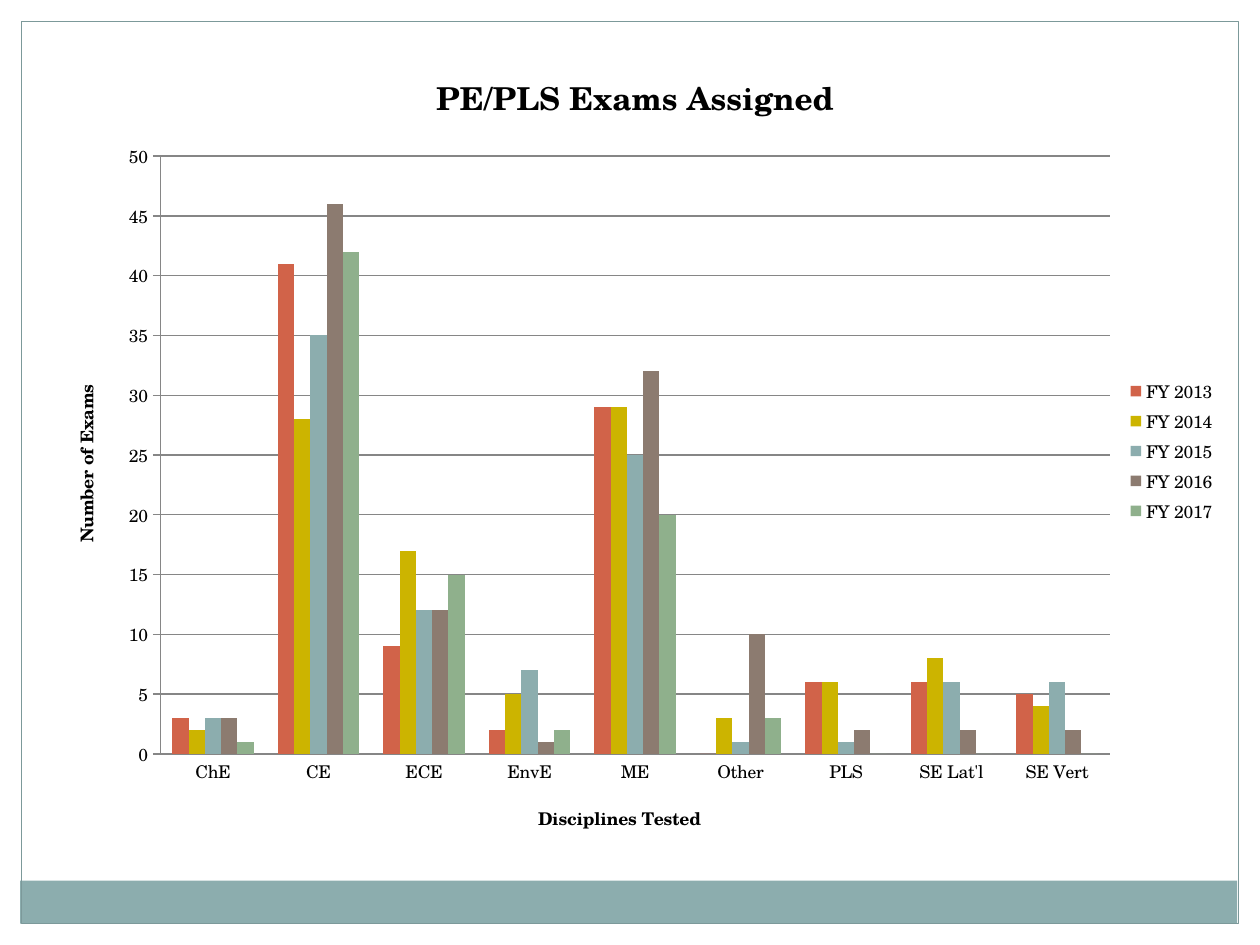
"""Build the slide with a clustered column chart of PE/PLS exams assigned per discipline."""
from lxml import etree
from pptx import Presentation
from pptx import util as u
from pptx.chart.data import CategoryChartData
from pptx.dml.color import RGBColor
from pptx.enum import chart as kinds, shapes
from pptx.oxml.ns import qn

FONT = "TeX Gyre Schola"


def color(value):
    return RGBColor.from_string(value)


def add_title(owner, words, size):
    owner.has_title = True
    frame = owner.chart_title.text_frame if hasattr(owner, "chart_title") else owner.axis_title.text_frame
    frame.text = words
    font = frame.paragraphs[0].font
    font.name, font.size, font.bold = FONT, u.Pt(size), True
    font.color.rgb = color("000000")


deck = Presentation()
deck.slide_width, deck.slide_height = u.Inches(10), u.Inches(7.5)
page = deck.slides.add_slide(deck.slide_layouts[6])

panels = [
    (0, 0, 10, 0.17, "FFFFFF", None),
    (9.83, 0, 0.17, 7.5, "FFFFFF", None),
    (0, 0, 0.17, 7.5, "FFFFFF", None),
    (0.16, 6.99, 9.66, 0.34, "8CADAE", None),
    (0.17, 0.17, 9.66, 7.16, None, "7C999A"),
]
for left, top, width, height, fill, line in panels:
    panel = page.shapes.add_shape(
        shapes.MSO_SHAPE.RECTANGLE, *map(u.Inches, (left, top, width, height)))
    panel.shadow.inherit = False
    if fill:
        panel.fill.solid()
        panel.fill.fore_color.rgb = color(fill)
    else:
        panel.fill.background()
    if line:
        panel.line.color.rgb = color(line)
        panel.line.width = u.Pt(0.75)
    else:
        panel.line.fill.background()

exams = {
    "FY 2013": ("D16349", (3, 41, 9, 2, 29, 0, 6, 6, 5)),
    "FY 2014": ("CCB400", (2, 28, 17, 5, 29, 3, 6, 8, 4)),
    "FY 2015": ("8CADAE", (3, 35, 12, 7, 25, 1, 1, 6, 6)),
    "FY 2016": ("8C7B70", (3, 46, 12, 1, 32, 10, 2, 2, 2)),
    "FY 2017": ("8FB08C", (1, 42, 15, 2, 20, 3, 0, 0, 0)),
}
data = CategoryChartData()
data.categories = ["ChE", "CE", "ECE", "EnvE", "ME", "Other", "PLS", "SE Lat'l", "SE Vert"]
for year, (_, counts) in exams.items():
    data.add_series(year, counts)

chart = page.shapes.add_chart(
    kinds.XL_CHART_TYPE.COLUMN_CLUSTERED,
    *map(u.Inches, (0.33, 0.33, 9.42, 6.5)), data).chart
chart.font.name, chart.font.size = FONT, u.Pt(10)
chart.font.color.rgb = color("000000")
add_title(chart, "PE/PLS Exams Assigned", 18)
chart.has_legend = True
chart.legend.position = kinds.XL_LEGEND_POSITION.RIGHT
chart.legend.include_in_layout = False

plot = chart.plots[0]
plot.gap_width, plot.overlap = 150, 0
plot.vary_by_categories = False
for series, (fill, _) in zip(plot.series, exams.values()):
    series.format.fill.solid()
    series.format.fill.fore_color.rgb = color(fill)

disciplines, numbers = chart.category_axis, chart.value_axis
add_title(disciplines, "Disciplines Tested", 10)
add_title(numbers, "Number of Exams", 10)
disciplines.major_tick_mark = kinds.XL_TICK_MARK.NONE
numbers.major_tick_mark = kinds.XL_TICK_MARK.OUTSIDE
numbers.minimum_scale, numbers.maximum_scale, numbers.major_unit = 0, 50, 5
numbers.has_major_gridlines = True
for stroke in (disciplines.format.line, numbers.format.line, numbers.major_gridlines.format.line):
    stroke.color.rgb = color("868686")
    stroke.width = u.Pt(0.75)

area = chart.element.find(".//" + qn("c:plotArea"))
layout = area.find(qn("c:layout"))
if layout is None:
    layout = etree.Element(qn("c:layout"))
    area.insert(0, layout)
manual = etree.SubElement(layout, qn("c:manualLayout"))
for tag, value in [
    ("layoutTarget", "inner"), ("xMode", "edge"), ("yMode", "edge"),
    ("x", 0.1), ("y", 0.14), ("w", 0.8), ("h", 0.73),
]:
    etree.SubElement(manual, qn("c:" + tag)).set("val", str(value))

deck.save("out.pptx")
